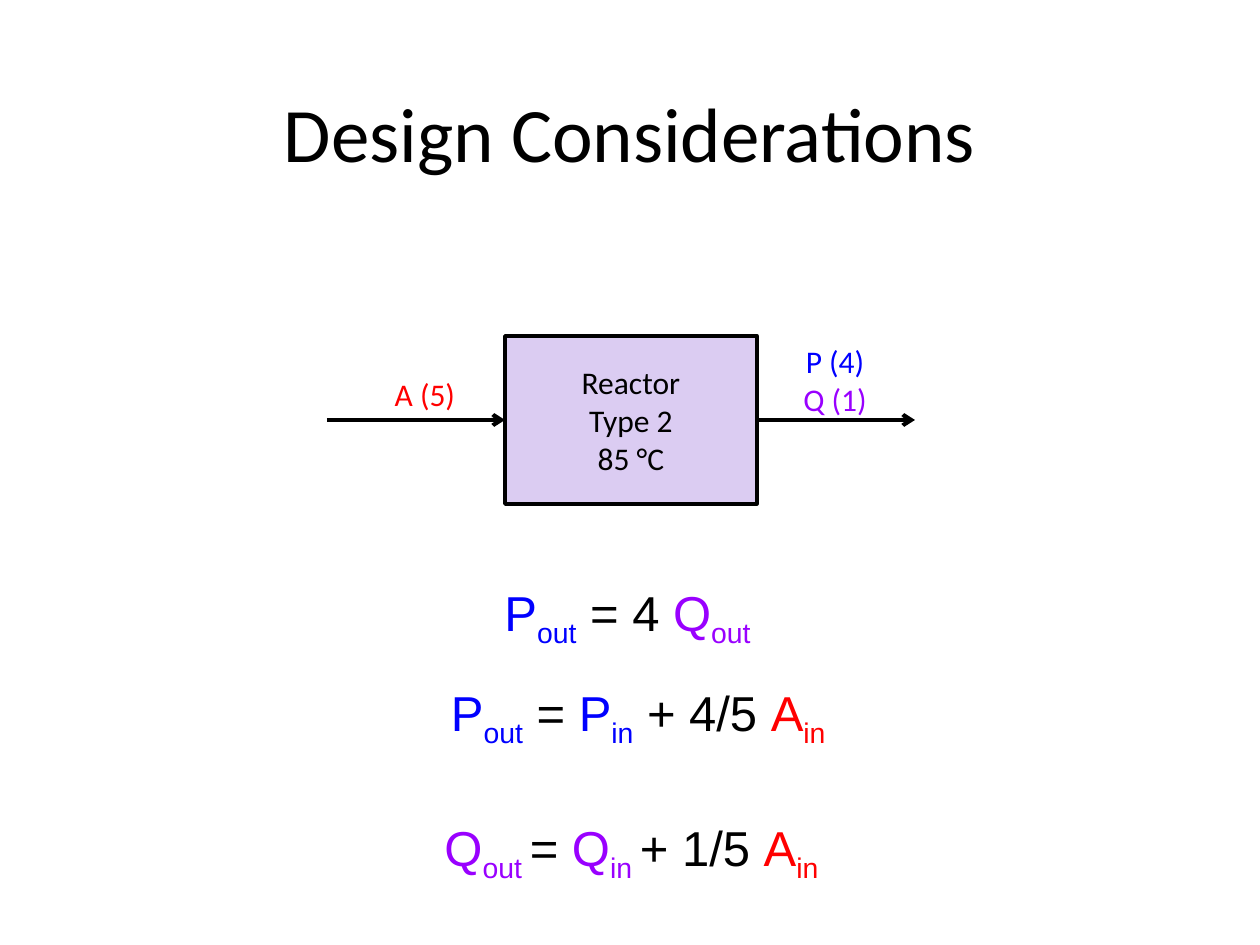
from lxml.etree import SubElement
from pptx import Presentation
from pptx.dml.color import RGBColor
from pptx.enum.shapes import MSO_CONNECTOR as CONNECTOR, MSO_SHAPE as SHAPE
from pptx.enum.text import MSO_ANCHOR as ANCHOR, PP_ALIGN as ALIGN
from pptx.oxml.ns import qn
from pptx.util import Emu, Inches, Pt

BLACK, RED, BLUE, PURPLE, LILAC = "000000", "FF0000", "0000FF", "9900FF", "DBCCF2"


def px(length):
    return Emu(round(length * 914400 / 126))


def rgb(value):
    return RGBColor.from_string(value)


class SlideBuilder:
    """Draws styled elements on one slide, with lengths in px."""

    def __init__(self, slide):
        self.slide = slide
        self.diagram = slide.shapes.add_group_shape().shapes

    def style(self, font, name, size, color=None):
        font.name, font.size = name, Pt(size)
        if color:
            font.color.rgb = rgb(color)

    def title(self, text, *box):
        heading = self.slide.shapes.title
        heading.left, heading.top, heading.width, heading.height = map(px, box)
        heading.text_frame.text = text
        heading.text_frame.vertical_anchor = ANCHOR.MIDDLE
        paragraph = heading.text_frame.paragraphs[0]
        paragraph.alignment = ALIGN.CENTER
        self.style(paragraph.font, "Calibri", 44, BLACK)

    def unit(self, *box):
        block = self.diagram.add_shape(SHAPE.RECTANGLE, *map(px, box))
        block.shadow.inherit = False
        block.fill.solid()
        block.fill.fore_color.rgb = rgb(LILAC)
        block.line.color.rgb = rgb(BLACK)
        block.line.width = Pt(2)
        return block

    def stream(self, start, end, y):
        arrow = self.diagram.add_connector(CONNECTOR.STRAIGHT, px(start), px(y), px(end), px(y))
        arrow.line.color.rgb = rgb(BLACK)
        arrow.line.width = Pt(2.25)
        SubElement(arrow.line._get_or_add_ln(), qn("a:tailEnd"), type="arrow")
        SubElement(arrow._element.spPr, qn("a:effectLst"))
        return arrow

    def text_frame(self, shapes, box):
        frame = shapes.add_textbox(*map(px, box)).text_frame
        frame.word_wrap = True
        return frame

    def paragraphs(self, frame, count):
        for _ in range(count - 1):
            frame.add_paragraph()
        for paragraph in frame.paragraphs:
            paragraph.alignment = ALIGN.CENTER
        return frame.paragraphs

    def label(self, lines, *box):
        frame = self.text_frame(self.diagram, box)
        for paragraph, (text, color) in zip(self.paragraphs(frame, len(lines)), lines):
            paragraph.add_run().text = text
            self.style(paragraph.font, "Calibri", 18, color)

    def equations(self, rows, *box):
        frame = self.text_frame(self.slide.shapes, box)
        for paragraph, (gap, terms) in zip(self.paragraphs(frame, len(rows)), rows):
            paragraph.space_before = Pt(gap)
            self.style(paragraph.font, "Arial", 28)
            for base, subscript, color in terms:
                self.term(paragraph, base, color)
                if subscript:
                    index = self.term(paragraph, subscript, color)
                    index.font._element.set("baseline", "-25000")

    def term(self, paragraph, text, color):
        run = paragraph.add_run()
        run.text = text
        run.font.color.rgb = rgb(color)
        return run


def main():
    deck = Presentation()
    deck.slide_width, deck.slide_height = Inches(10), Inches(7.5)
    builder = SlideBuilder(deck.slides.add_slide(deck.slide_layouts[5]))

    builder.title("Design Considerations", 63, 53, 1134, 157)

    reactor = builder.unit(505, 336, 252, 168)
    builder.stream(327, 505, 420).end_connect(reactor, 1)
    builder.stream(757, 915, 420).begin_connect(reactor, 3)
    conditions = [(line, BLACK) for line in ("Reactor", "Type 2", "85 °C")]
    builder.label(conditions, 505, 357, 252, 127)
    builder.label([("A (5)", RED)], 299, 369, 252, 50)
    builder.label([("P (4)", BLUE), ("Q (1)", PURPLE)], 709, 336, 252, 89)

    feed = ("A", "in", RED)
    builder.equations([
        (0, [("P", "out", BLUE), (" = 4 ", "", BLACK), ("Q", "out ", PURPLE)]),
        (19, [(" P", "out", BLUE), (" = ", "", BLACK), ("P", "in", BLUE),
              (" + 4/5 ", "", BLACK), feed]),
        (39, [("Q", "out ", PURPLE), ("=", "", BLACK), (" Q", "in ", PURPLE),
              ("+ 1/5 ", "", BLACK), feed]),
    ], 260, 576, 743, 260)

    deck.save("out.pptx")


if __name__ == "__main__":
    main()
